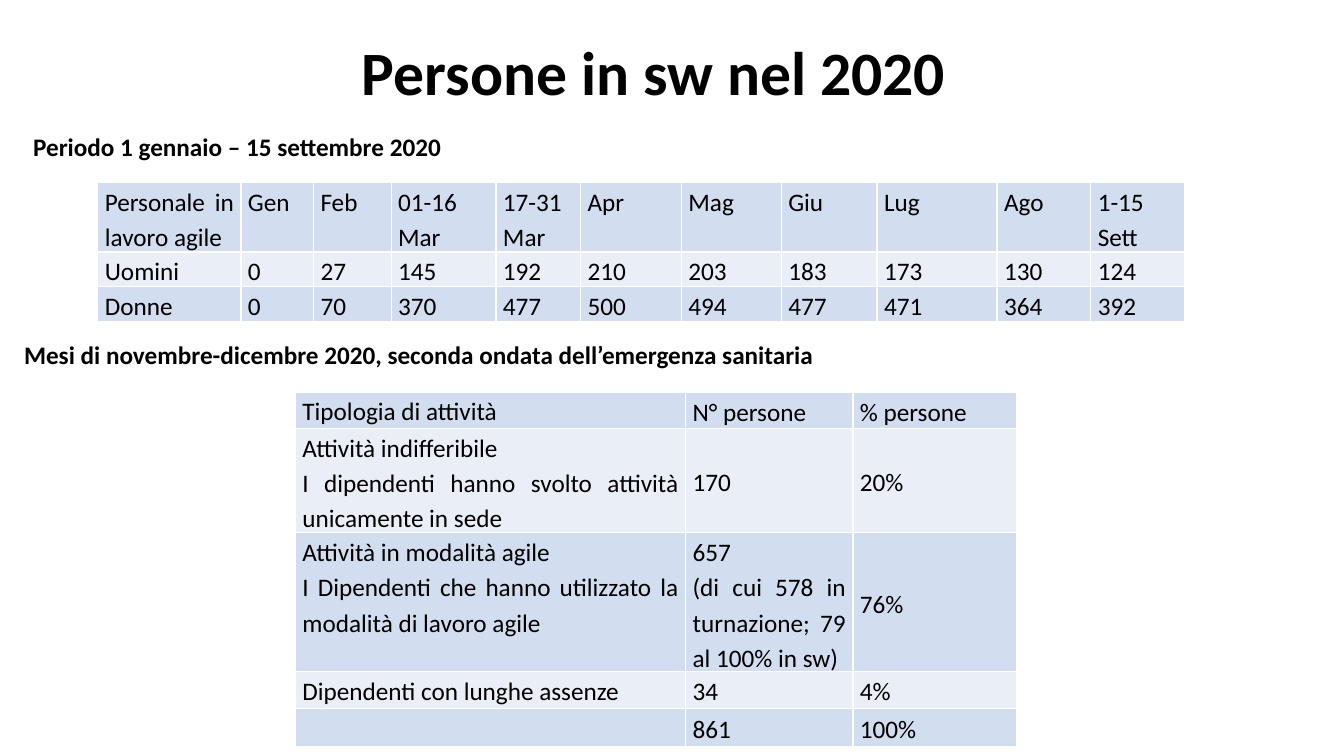
import pptx
import pptx.dml.color
import pptx.enum.text
import pptx.oxml
import pptx.oxml.ns
import pptx.util

Inches = pptx.util.Inches
Pt = pptx.util.Pt
ALIGN = pptx.enum.text.PP_ALIGN
ANCHOR = pptx.enum.text.MSO_ANCHOR
AUTO_SIZE = pptx.enum.text.MSO_AUTO_SIZE

FONT = "Calibri"
BLACK, WHITE = "000000", "FFFFFF"
BANDS = ("D2DEEF", "EAEFF7")

MONTHLY_COLUMNS = [1.42, 0.72, 0.77, 1.04, 0.84, 1, 0.99, 0.95, 1.19, 0.93, 0.93]
MONTHLY_HEIGHTS = [0.45, 0.22, 0.26]
MONTHLY_ROWS = [
    ["Personale in lavoro agile", "Gen", "Feb", "01-16 Mar", "17-31 Mar", "Apr",
     "Mag", "Giu", "Lug", "Ago", "1-15 Sett"],
    ["Uomini", "0", "27", "145", "192", "210", "203", "183", "173", "130", "124"],
    ["Donne", "0", "70", "370", "477", "500", "494", "477", "471", "364", "392"],
]

ACTIVITY_COLUMNS = [3.87, 1.66, 1.62]
ACTIVITY_HEIGHTS = [0.36, 0.99, 1.2, 0.36, 0.38]
ACTIVITY_ROWS = [
    ["Tipologia di attività", "N° persone", "% persone"],
    ["Attività indifferibile\nI dipendenti hanno svolto attività unicamente in sede",
     "170", "20%"],
    ["Attività in modalità agile\n"
     "I Dipendenti che hanno utilizzato la modalità di lavoro agile",
     "657\n(di cui 578 in turnazione; 79 al 100% in sw)", "76%"],
    ["Dipendenti con lunghe assenze", "34", "4%"],
    ["", "861", "100%"],
]


def color(value):
    return pptx.dml.color.RGBColor.from_string(value)


def add_run(paragraph, text, size=18, bold=False):
    run = paragraph.add_run()
    run.text = text
    run.font.name = FONT
    run.font.size = Pt(size)
    run.font.bold = bold
    run.font.color.rgb = color(BLACK)


def add_borders(cell):
    properties = cell._tc.get_or_add_tcPr()
    for side in ("lnL", "lnR", "lnT", "lnB"):
        properties.append(pptx.oxml.parse_xml(
            f'<a:{side} {pptx.oxml.ns.nsdecls("a")} w="{Pt(1)}"><a:solidFill>'
            f'<a:srgbClr val="{WHITE}"/></a:solidFill></a:{side}>'))


def fill_cell(cell, text, band, anchor, space_after):
    add_borders(cell)
    cell.fill.solid()
    cell.fill.fore_color.rgb = color(band)
    cell.margin_left = cell.margin_right = Inches(0.07)
    cell.margin_top = cell.margin_bottom = 0
    cell.vertical_anchor = anchor
    for index, line in enumerate(text.split("\n")):
        frame = cell.text_frame
        paragraph = frame.add_paragraph() if index else frame.paragraphs[0]
        paragraph.alignment = ALIGN.JUSTIFY
        paragraph.line_spacing = 1.15
        paragraph.space_after = Pt(space_after)
        if line:
            add_run(paragraph, line)


def add_banded_table(slide, left, top, widths, heights, rows, number_anchor, space_after):
    table = slide.shapes.add_table(
        len(rows), len(widths), Inches(left), Inches(top),
        Inches(sum(widths)), Inches(sum(heights))).table
    table.first_row = table.horz_banding = False
    for column, width in zip(table.columns, widths):
        column.width = Inches(width)
    for row_index, (height, texts) in enumerate(zip(heights, rows)):
        table.rows[row_index].height = Inches(height)
        for column_index, text in enumerate(texts):
            fill_cell(table.cell(row_index, column_index), text, BANDS[row_index % 2],
                      number_anchor if column_index else ANCHOR.TOP, space_after)


def add_heading(slide, left, top, width, height, text, wrap):
    box = slide.shapes.add_textbox(Inches(left), Inches(top), Inches(width), Inches(height))
    box.text_frame.word_wrap = wrap
    box.text_frame.auto_size = AUTO_SIZE.SHAPE_TO_FIT_TEXT
    add_run(box.text_frame.paragraphs[0], text, bold=True)


def set_title(slide, left, top, width, height, text):
    title = slide.shapes.title
    title.left, title.top = Inches(left), Inches(top)
    title.width, title.height = Inches(width), Inches(height)
    title.text_frame.auto_size = AUTO_SIZE.NONE
    title.text_frame.vertical_anchor = ANCHOR.MIDDLE
    paragraph = title.text_frame.paragraphs[0]
    paragraph.alignment = ALIGN.CENTER
    paragraph.line_spacing = 0.9
    add_run(paragraph, text, size=44, bold=True)


def main():
    presentation = pptx.Presentation()
    presentation.slide_width = Inches(13.33)
    presentation.slide_height = Inches(7.5)
    slide = presentation.slides.add_slide(presentation.slide_layouts[5])

    # Title
    set_title(slide, 0.33, 0.39, 12.31, 0.72, "Persone in sw nel 2020")

    # January to September, month by month
    add_heading(slide, 0.23, 1.25, 4.25, 0.4, "Periodo 1 gennaio – 15 settembre 2020", False)
    add_banded_table(slide, 0.97, 1.81, MONTHLY_COLUMNS, MONTHLY_HEIGHTS, MONTHLY_ROWS,
                     ANCHOR.TOP, 10)

    # November and December, by type of activity
    add_heading(slide, 0.14, 3.32, 13.19, 0.4,
                "Mesi di novembre-dicembre 2020, seconda ondata dell’emergenza sanitaria", True)
    add_banded_table(slide, 2.93, 3.89, ACTIVITY_COLUMNS, ACTIVITY_HEIGHTS, ACTIVITY_ROWS,
                     ANCHOR.MIDDLE, 0)

    presentation.save("out.pptx")


if __name__ == "__main__":
    main()
